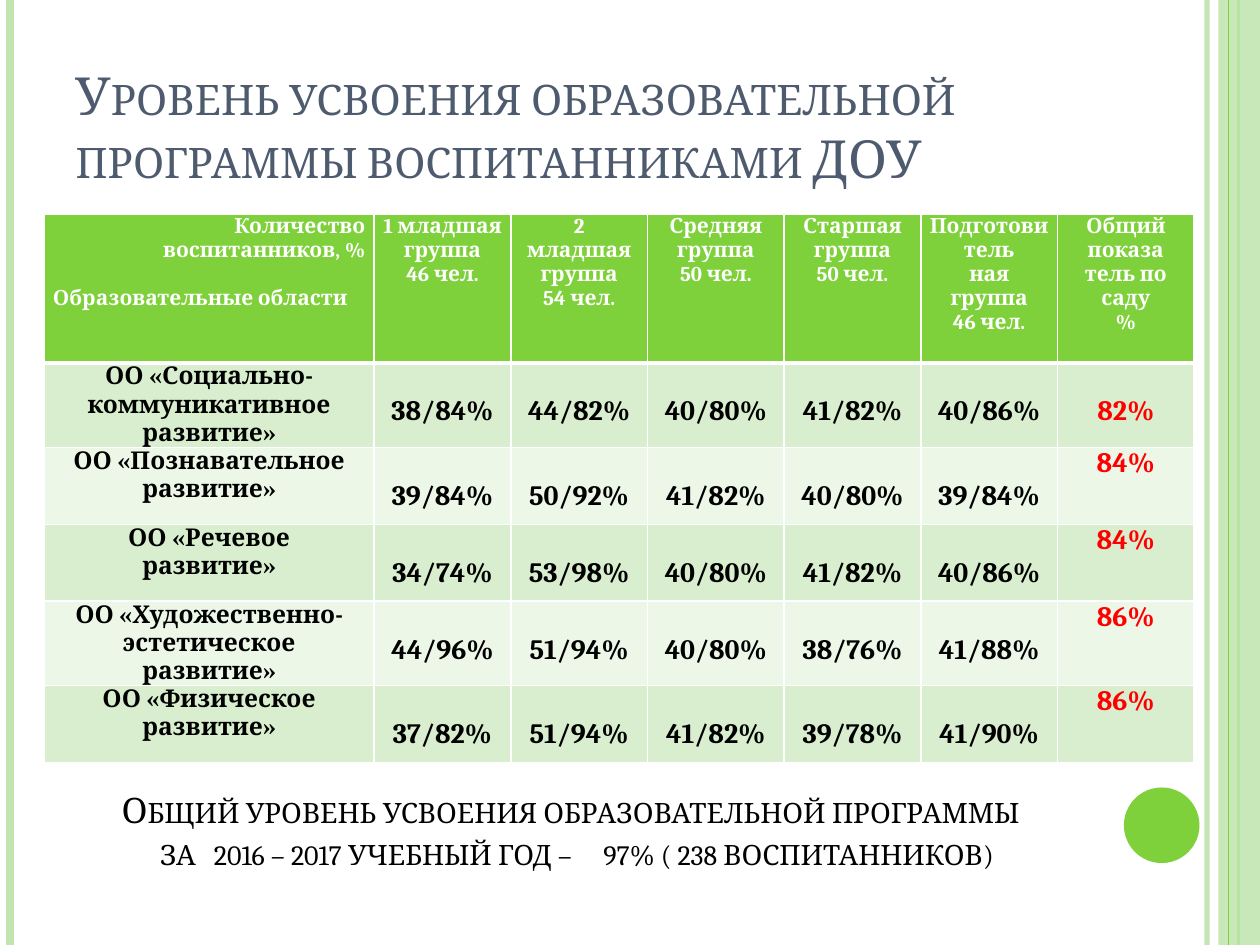
"""Build a slide with a table of programme mastery levels by kindergarten group."""
from typing import NamedTuple, Optional

from lxml.etree import SubElement
from pptx import Presentation
from pptx.dml.color import RGBColor
from pptx.enum.shapes import MSO_CONNECTOR as Connector, MSO_SHAPE as Shape
from pptx.enum.text import MSO_ANCHOR as Anchor, PP_ALIGN as Align
from pptx.oxml import parse_xml
from pptx.oxml.ns import nsdecls, qn
from pptx.util import Inches, Pt

FONT = "Cambria"
GREEN = RGBColor(0x7F, 0xD1, 0x3B)
PALE_GREEN = RGBColor(0xC0, 0xE5, 0xAF)
BANDS = (RGBColor(0xD8, 0xEE, 0xCE), RGBColor(0xEC, 0xF7, 0xE8))
SLATE = RGBColor(0x4E, 0x5B, 0x6F)
WHITE = RGBColor(0xFF, 0xFF, 0xFF)
BLACK = RGBColor(0, 0, 0)
RED = RGBColor(0xFF, 0, 0)


class Stripe(NamedTuple):
    x: float
    width: float
    color: RGBColor
    opacity: Optional[int] = None


class Area(NamedTuple):
    name: tuple
    groups: tuple
    total: str


BACK_STRIPES = (
    Stripe(9.58, 3, PALE_GREEN, 93),
    Stripe(0.08, 4.5, PALE_GREEN),
    Stripe(9.83, 1.5, GREEN),
)
FRONT_STRIPE = Stripe(9.75, 0.75, GREEN)

HEADERS = (
    ("Количество воспитанников, %", "Образовательные области"),
    ("1 младшая группа", "46 чел."),
    ("2 младшая группа", "54 чел."),
    ("Средняя группа", "50 чел."),
    ("Старшая группа", "50 чел."),
    ("Подготовитель", "ная группа", "46 чел."),
    ("Общий показа", "тель по саду", "%"),
)
AREAS = (
    Area(("ОО «Социально-коммуникативное", "развитие»"),
         ("38/84%", "44/82%", "40/80%", "41/82%", "40/86%"), "82%"),
    Area(("ОО «Познавательное", "развитие»"),
         ("39/84%", "50/92%", "41/82%", "40/80%", "39/84%"), "84%"),
    Area(("ОО «Речевое", "развитие»"),
         ("34/74%", "53/98%", "40/80%", "41/82%", "40/86%"), "84%"),
    Area(("ОО «Художественно-эстетическое", "развитие»"),
         ("44/96%", "51/94%", "40/80%", "38/76%", "41/88%"), "86%"),
    Area(("ОО «Физическое", "развитие»"),
         ("37/82%", "51/94%", "41/82%", "39/78%", "41/90%"), "86%"),
)


def set_opacity(properties, percent: int) -> None:
    color = next(properties.iter(qn("a:srgbClr")))
    SubElement(color, qn("a:alpha")).set("val", str(percent * 1000))


def add_stripe(page, stripe: Stripe) -> None:
    x = Inches(stripe.x)
    line = page.shapes.add_connector(Connector.STRAIGHT, x, 0, x, Inches(7.5))
    line.line.color.rgb = stripe.color
    line.line.width = Pt(stripe.width)
    properties = line._element.spPr
    SubElement(properties, qn("a:effectLst"))
    if stripe.opacity:
        set_opacity(properties, stripe.opacity)


def add_plain_shape(page, kind, bounds: tuple, color: RGBColor):
    shape = page.shapes.add_shape(kind, *map(Inches, bounds))
    shape.shadow.inherit = False
    shape.fill.solid()
    shape.fill.fore_color.rgb = color
    shape.line.fill.background()
    return shape


def write(frame, lines: tuple, *, size: float, color: RGBColor,
          align=Align.CENTER, bold: bool = False, small_caps: bool = False) -> None:
    for index, text in enumerate(lines):
        para = frame.add_paragraph() if index else frame.paragraphs[0]
        para.alignment = align
        span = para.add_run()
        span.text = text
        font = span.font
        font.name, font.size, font.bold = FONT, Pt(size), bold
        font.color.rgb = color
        if small_caps:
            span._r.get_or_add_rPr().set("cap", "small")


def set_borders(cell, *, top: float = 1, bottom: float = 1) -> None:
    properties = cell._tc.get_or_add_tcPr()
    widths = {"lnL": 1, "lnR": 1, "lnT": top, "lnB": bottom}
    for index, (side, width) in enumerate(widths.items()):
        properties.insert(index, parse_xml(
            f'<a:{side} {nsdecls("a")} w="{Pt(width)}"><a:solidFill>'
            f'<a:srgbClr val="{WHITE}"/></a:solidFill></a:{side}>'))


def fill_cell(cell, lines: tuple, *, fill: RGBColor, size: float, color: RGBColor,
              inset: float = 0, top: float = 1, bottom: float = 1) -> None:
    cell.margin_left = cell.margin_right = Inches(0.07)
    cell.margin_top, cell.margin_bottom = Inches(inset), 0
    cell.fill.solid()
    cell.fill.fore_color.rgb = fill
    set_borders(cell, top=top, bottom=bottom)
    write(cell.text_frame, lines, size=size, color=color, bold=True)


def add_level_table(page) -> None:
    bounds = map(Inches, (0.35, 1.7, 9.13, 4.23))
    table = page.shapes.add_table(len(AREAS) + 1, len(HEADERS), *bounds).table
    for index, column in enumerate(table.columns):
        column.width = Inches(1.085 if index else 2.62)
    for index, row in enumerate(table.rows):
        row.height = Inches(0.61 if index else 1.18)

    for column, lines in enumerate(HEADERS):
        fill_cell(table.cell(0, column), lines, fill=GREEN, size=12, color=WHITE, bottom=3)
    count, areas = table.cell(0, 0).text_frame.paragraphs
    count.alignment, areas.alignment = Align.RIGHT, Align.LEFT
    areas.space_before = Pt(14)

    for row, area in enumerate(AREAS, 1):
        style = {"fill": BANDS[(row - 1) % 2], "top": 3 if row == 1 else 1}
        fill_cell(table.cell(row, 0), area.name, size=14, color=BLACK, **style)
        for column, value in enumerate(area.groups, 1):
            fill_cell(table.cell(row, column), (value,), size=16, color=BLACK,
                      inset=0.26, **style)
        fill_cell(table.cell(row, len(HEADERS) - 1), (area.total,), size=16, color=RED,
                  inset=0.26 if row == 1 else 0, **style)


def add_title(page) -> None:
    title = page.shapes.title
    title.left, title.top, title.width, title.height = map(Inches, (0.5, 0.3, 8.17, 1.25))
    frame = title.text_frame
    frame.word_wrap = True
    frame.vertical_anchor = Anchor.BOTTOM
    write(frame, ("Уровень усвоения образовательной программы воспитанниками ДОУ",),
          size=30, color=SLATE, align=Align.LEFT, small_caps=True)


def add_summary(page) -> None:
    box = page.shapes.add_textbox(*map(Inches, (0.2, 5.72, 8.66, 1.25)))
    frame = box.text_frame
    frame.word_wrap = True
    frame.vertical_anchor = Anchor.BOTTOM
    write(frame, ("Общий уровень усвоения образовательной программы",
                  "\tза\t2016 – 2017 учебный год –\t97% ( 238 воспитанников)"),
          size=20, color=BLACK, small_caps=True)
    result = frame.paragraphs[1]
    result.alignment = Align.LEFT
    tabs = SubElement(result._p.get_or_add_pPr(), qn("a:tabLst"))
    for position in (0.97, 1.4, 4.49):
        tab = SubElement(tabs, qn("a:tab"))
        tab.set("pos", str(Inches(position)))
        tab.set("algn", "l")


def main() -> None:
    deck = Presentation()
    deck.slide_width, deck.slide_height = Inches(10), Inches(7.5)
    page = deck.slides.add_slide(deck.slide_layouts[5])
    for stripe in BACK_STRIPES:
        add_stripe(page, stripe)
    band = add_plain_shape(page, Shape.RECTANGLE, (9.67, 0, 0.33, 7.5), PALE_GREEN)
    set_opacity(band._element.spPr, 87)
    add_stripe(page, FRONT_STRIPE)
    add_plain_shape(page, Shape.OVAL, (8.92, 6.25, 0.6, 0.6), GREEN)
    add_title(page)
    add_level_table(page)
    add_summary(page)
    deck.save("out.pptx")


if __name__ == "__main__":
    main()
